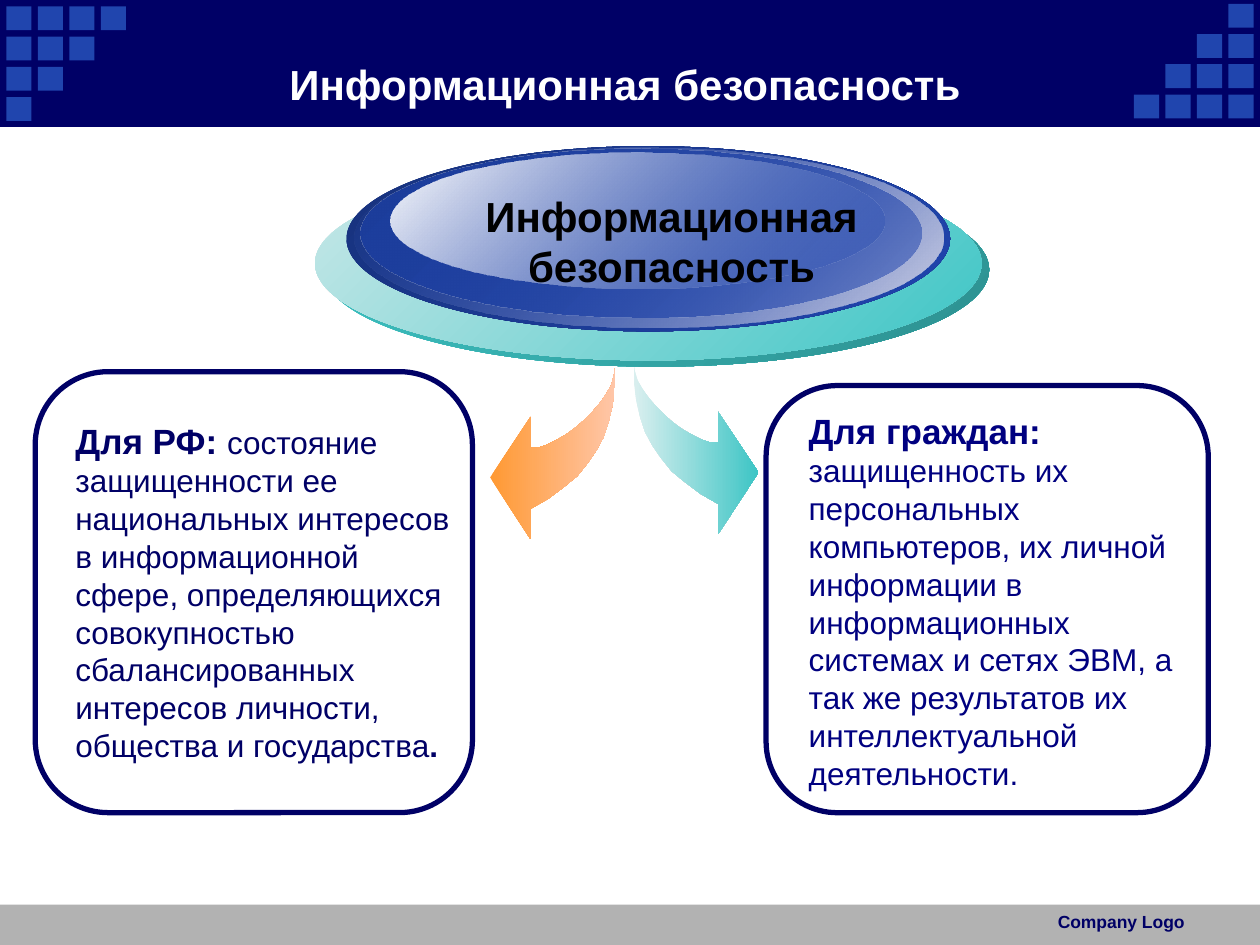
from lxml import etree
from pptx import Presentation
from pptx.dml.color import RGBColor
from pptx.enum.shapes import MSO_SHAPE
from pptx.enum.text import MSO_ANCHOR, PP_ALIGN
from pptx.oxml.ns import qn
from pptx.util import Inches, Pt

WIDTH, HEIGHT = 10, 7.5
NAVY = RGBColor(0x00, 0x00, 0x66)
BRIGHT_NAVY = RGBColor(0x00, 0x00, 0x80)
BLUE = RGBColor(0x20, 0x45, 0xAE)
DEEP_BLUE = RGBColor(0x1D, 0x3E, 0x9D)
DARK_BLUE = RGBColor(0x17, 0x31, 0x7C)
LAVENDER = RGBColor(0xD4, 0xD6, 0xE7)
TEAL = RGBColor(0x3D, 0xC5, 0xC5)
DARK_TEAL = RGBColor(0x2D, 0x90, 0x90)
PALE_TEAL = RGBColor(0xC8, 0xE8, 0xE8)
MIST = RGBColor(0xDA, 0xEF, 0xEF)
ORANGE = RGBColor(0xFF, 0x99, 0x33)
PEACH = RGBColor(0xFF, 0xC6, 0xA8)
GRAY = RGBColor(0xB2, 0xB2, 0xB2)
WHITE = RGBColor(0xFF, 0xFF, 0xFF)
BLACK = RGBColor(0x00, 0x00, 0x00)

# Half of the arrow pair, as offsets from its top point towards its head
ARROW = [
    (0, 0), (0, 0.15), (0.02, 0.3), (0.05, 0.43), (0.09, 0.55), (0.15, 0.66),
    (0.22, 0.76), (0.3, 0.86), (0.41, 0.95), (0.53, 1.04), (0.67, 1.12),
    (0.67, 1.36), (0.99, 0.87), (0.67, 0.39), (0.67, 0.63), (0.6, 0.63),
    (0.54, 0.61), (0.46, 0.57), (0.39, 0.53), (0.32, 0.48), (0.25, 0.42),
    (0.18, 0.35), (0.12, 0.28), (0.07, 0.21), (0.03, 0.14), (0.01, 0.07),
]


def add_shape(slide, kind, box, fill=None, line=None, line_width=0.75):
    shape = slide.shapes.add_shape(kind, *map(Inches, box))
    shape.shadow.inherit = False
    if fill is None:
        shape.fill.background()
    else:
        shape.fill.solid()
        shape.fill.fore_color.rgb = fill
    if line is None:
        shape.line.fill.background()
    else:
        shape.line.color.rgb = line
        shape.line.width = Pt(line_width)
    return shape


def set_gradient(shape, stops, angle):
    """Fill with (colour, opacity percent) stops; the angle runs clockwise."""
    shape.fill.background()
    old_fill = shape.fill._xPr.find(qn("a:noFill"))
    gradient = etree.Element(qn("a:gradFill"), rotWithShape="1")
    stop_list = etree.SubElement(gradient, qn("a:gsLst"))
    for index, (color, opacity) in enumerate(stops):
        stop = etree.SubElement(stop_list, qn("a:gs"), pos=str(index * 100000))
        tone = etree.SubElement(stop, qn("a:srgbClr"), val=str(color))
        if opacity < 100:
            etree.SubElement(tone, qn("a:alpha"), val=str(opacity * 1000))
    etree.SubElement(gradient, qn("a:lin"), ang=str(angle * 60000), scaled="1")
    old_fill.getparent().replace(old_fill, gradient)


def add_text(slide, box, runs, align=PP_ALIGN.LEFT, anchor=MSO_ANCHOR.TOP):
    """Each run is (text, size, bold, colour)."""
    frame = slide.shapes.add_textbox(*map(Inches, box)).text_frame
    frame.word_wrap = True
    frame.vertical_anchor = anchor
    paragraph = frame.paragraphs[0]
    paragraph.alignment = align
    for text, size, bold, color in runs:
        run = paragraph.add_run()
        run.text = text
        run.font.name = "Arial"
        run.font.size = Pt(size)
        run.font.bold = bold
        run.font.color.rgb = color


def add_squares(slide, left, top, widest_row_first):
    """Staircase of squares in a four by four grid."""
    for row in range(4):
        columns = range(4 - row) if widest_row_first else range(3 - row, 4)
        for column in columns:
            box = (left + 0.25 * column, top + 0.24 * row, 0.2, 0.19)
            add_shape(slide, MSO_SHAPE.RECTANGLE, box, BLUE)


def add_header(slide, box, title):
    left, top, width, height = box
    add_shape(slide, MSO_SHAPE.RECTANGLE, box, NAVY, NAVY)
    add_squares(slide, left + 0.05, top + 0.05, True)
    add_squares(slide, left + width - 1, top + 0.03, False)
    title_box = (left + 0.92, top + 0.35, 8.08, height - 0.38)
    add_text(slide, title_box, [(title, 24, True, WHITE)],
             PP_ALIGN.CENTER, MSO_ANCHOR.MIDDLE)


def add_footer(slide, box, text):
    left, top, width, height = box
    add_shape(slide, MSO_SHAPE.RECTANGLE, box, GRAY)
    add_text(slide, (left + width - 2.17, top, 1.67, height),
             [(text, 10, True, NAVY)], PP_ALIGN.RIGHT)


def add_emblem(slide, box, text):
    """Stack of shaded ellipses, each placed relative to the emblem's box."""
    left, top, width, height = box
    layers = [
        ((0.06, 0.21, 5.29, 1.54), (TEAL, 100), (DARK_TEAL, 100)),
        ((0, 0.16, 5.29, 1.54), (PALE_TEAL, 100), (TEAL, 100)),
        ((0.25, 0, 4.79, 1.47), (DARK_BLUE, 100), (BLUE, 100)),
        ((0.31, 0.01, 4.68, 1.43), (BLUE, 0), (LAVENDER, 100)),
        ((0.36, 0.02, 4.45, 1.34), (DEEP_BLUE, 100), (BLUE, 48)),
        ((0.6, 0.05, 3.92, 1.08), (WHITE, 100), (BLUE, 38)),
    ]
    for (x, y, layer_width, layer_height), *stops in layers:
        layer_box = (left + x, top + y, layer_width, layer_height)
        ellipse = add_shape(slide, MSO_SHAPE.OVAL, layer_box)
        set_gradient(ellipse, stops, 45)
    add_text(slide, (left + 1.23, top + 0.3, width - 2.15, height - 0.84),
             [(text, 24, True, BLACK)], PP_ALIGN.CENTER)


def add_arrow(slide, left, top, direction, colors):
    """Curved arrow; direction is 1 to the right and -1 to the left."""
    points = [(Inches(left + direction * x), Inches(top + y)) for x, y in ARROW]
    builder = slide.shapes.build_freeform(*points[0])
    builder.add_line_segments(points[1:], close=True)
    arrow = builder.convert_to_shape()
    arrow.shadow.inherit = False
    arrow.line.fill.background()
    set_gradient(arrow, [(color, 100) for color in colors], 0)


def add_panel(slide, box, text_box, runs):
    """Rounded frame; text_box is relative to its top left corner."""
    left, top = box[:2]
    x, y, width, height = text_box
    add_shape(slide, MSO_SHAPE.ROUNDED_RECTANGLE, box, line=NAVY, line_width=3)
    add_text(slide, (left + x, top + y, width, height), runs)


def main():
    presentation = Presentation()
    presentation.slide_width = Inches(WIDTH)
    presentation.slide_height = Inches(HEIGHT)
    slide = presentation.slides.add_slide(presentation.slide_layouts[6])

    # Bands at the top and bottom
    add_footer(slide, (0, 7.18, WIDTH, 0.32), "Company Logo")
    add_header(slide, (0, 0, WIDTH, 1), "Информационная безопасность")

    # Two definitions
    add_panel(slide, (6.08, 3.06, 3.51, 3.39), (0.24, 0.14, 3.18, 3.4), [
        ("Для граждан: ", 20, True, BRIGHT_NAVY),
        ("защищенность их персональных компьютеров, их личной информации "
         "в информационных системах и сетях ЭВМ, а так же результатов их "
         "интеллектуальной деятельности.", 18, False, BRIGHT_NAVY),
    ])
    add_panel(slide, (0.28, 2.95, 3.47, 3.5), (0.22, 0.33, 3.24, 2.86), [
        ("Для РФ: ", 20, True, NAVY),
        ("состояние защищенности ее национальных интересов в информационной "
         "сфере, определяющихся совокупностью сбалансированных интересов "
         "личности, общества и государства", 18, False, NAVY),
        (".", 18, True, NAVY),
    ])

    # Central term with arrows to its definitions
    add_arrow(slide, 4.88, 2.92, -1, (ORANGE, PEACH))
    add_arrow(slide, 5.03, 2.88, 1, (MIST, TEAL))
    add_emblem(slide, (2.5, 1.16, 5.35, 1.75), "Информационная безопасность")

    presentation.save("out.pptx")


if __name__ == "__main__":
    main()
